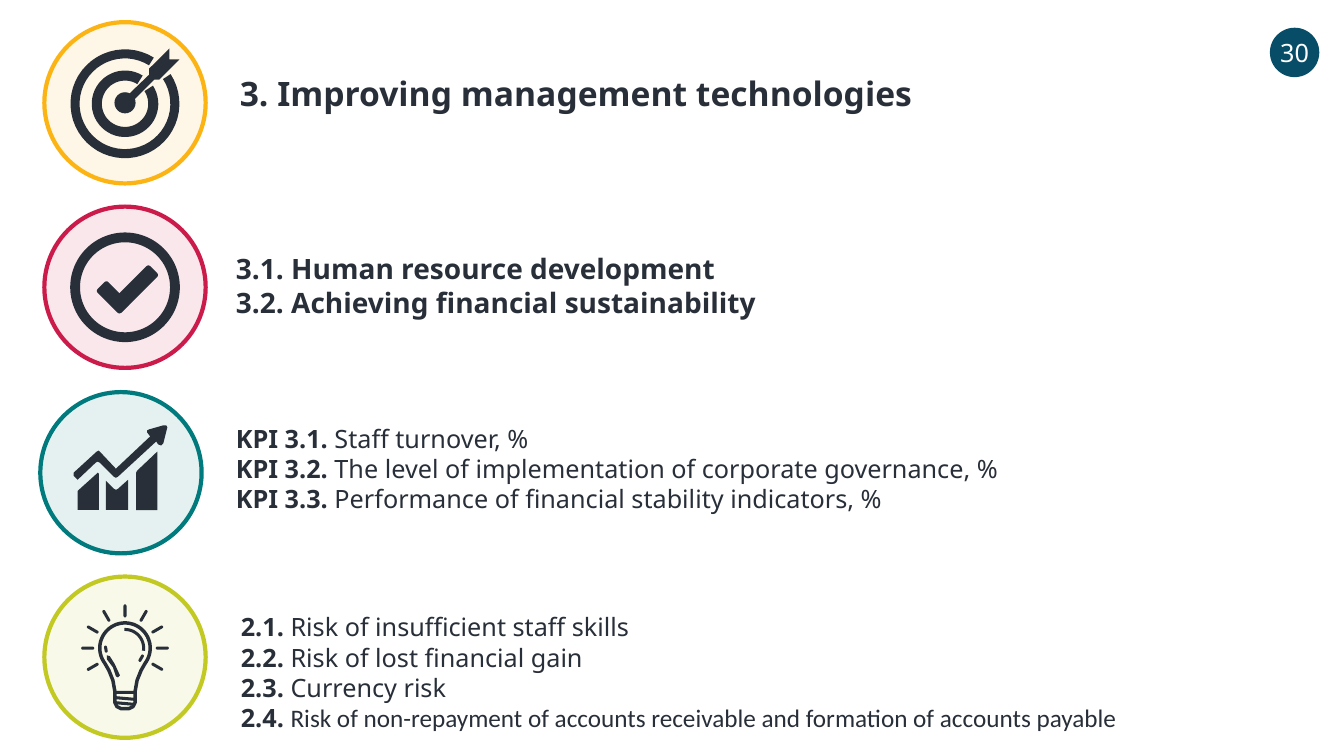
import math

from lxml import etree
from pptx import Presentation
from pptx.dml.color import RGBColor
from pptx.enum.shapes import MSO_SHAPE
from pptx.enum.text import MSO_ANCHOR, MSO_AUTO_SIZE, PP_ALIGN
from pptx.oxml.ns import qn
from pptx.util import Inches, Pt

OVAL = MSO_SHAPE.OVAL
ROUNDED = MSO_SHAPE.ROUNDED_RECTANGLE
MIDDLE = MSO_ANCHOR.MIDDLE
CENTER = PP_ALIGN.CENTER
FIT_SHAPE = MSO_AUTO_SIZE.SHAPE_TO_FIT_TEXT

COLORS = {
    "ink": "282F39",
    "page": "074D67",
    "white": "FFFFFF",
    "goal": "FCB414",
    "tasks": "CB1B4A",
    "kpi": "007A7D",
    "risks": "C2C923",
}
FONT = "Noto Sans"
MEDALLION_SIZE = 1.6


def rgb(name):
    return RGBColor.from_string(COLORS[name])


def paint(shape, fill=None, line=None, width=0):
    shape.shadow.inherit = False
    if fill:
        shape.fill.solid()
        shape.fill.fore_color.rgb = rgb(fill)
    else:
        shape.fill.background()
    if line:
        shape.line.color.rgb = rgb(line)
        shape.line.width = Pt(width)
    else:
        shape.line.fill.background()


def add_disc(shapes, cx, cy, diameter, fill=None, line=None, width=0):
    disc = shapes.add_shape(OVAL, Inches(cx - diameter / 2), Inches(cy - diameter / 2),
                            Inches(diameter), Inches(diameter))
    paint(disc, fill, line, width)
    return disc


def add_medallion(shapes, left, top, color):
    radius = MEDALLION_SIZE / 2
    medallion = add_disc(shapes, left + radius, top + radius, MEDALLION_SIZE, color, color, 3)
    tint = medallion.fill._xPr.find(qn("a:solidFill"))[0]
    etree.SubElement(tint, qn("a:alpha")).set("val", "10000")


def add_bar(shapes, cx, cy, length, thickness, angle, rounding=0.17):
    bar = shapes.add_shape(ROUNDED, Inches(cx - length / 2), Inches(cy - thickness / 2),
                           Inches(length), Inches(thickness))
    bar.rotation = angle
    bar.adjustments[0] = rounding
    paint(bar, "ink")


def add_outline(shapes, points, fill="ink", line=None, width=0):
    corners = [(Inches(x), Inches(y)) for x, y in points]
    builder = shapes.build_freeform(*corners[0])
    builder.add_line_segments(corners[1:], close=True)
    paint(builder.convert_to_shape(), fill, line, width)


def arc(cx, cy, radius, start, stop, steps=48):
    angles = [math.radians(start + (stop - start) * i / steps) for i in range(steps + 1)]
    return [(cx + radius * math.cos(a), cy - radius * math.sin(a)) for a in angles]


def add_ring(shapes, cx, cy, outer, inner, start, stop):
    add_outline(shapes, arc(cx, cy, outer, start, stop) + arc(cx, cy, inner, stop, start))


def add_target(shapes):
    cx, cy = 1.24, 1.03
    for outer, inner in ((0.54, 0.45), (0.33, 0.23)):
        add_ring(shapes, cx, cy, outer, inner, 58, 393)
    add_disc(shapes, cx, 1.02, 0.21, "ink")
    add_outline(shapes, [(1.68, 0.48), (1.68, 0.59), (1.78, 0.59), (1.58, 0.79), (1.53, 0.79),
                         (1.29, 1.03), (1.23, 0.98), (1.48, 0.74), (1.48, 0.68)])


def add_check(shapes):
    add_bar(shapes, 1.12, 2.95, 0.33, 0.15, 45)
    add_bar(shapes, 1.33, 2.87, 0.55, 0.15, 135)
    add_disc(shapes, 1.24, 2.85, 0.99, line="ink", width=7)


def add_growth(shapes):
    base = 5.06
    bars = (
        (0.77, 0.98, [(0.77, 4.87), (0.97, 4.69), (0.98, 4.7)]),
        (1.05, 1.27, [(1.05, 4.77), (1.13, 4.85), (1.15, 4.86), (1.17, 4.85), (1.27, 4.76)]),
        (1.35, 1.56, [(1.35, 4.69), (1.36, 4.67), (1.56, 4.48)]),
    )
    for left, right, skyline in bars:
        add_outline(shapes, skyline + [(right, base), (left, base)])
    add_outline(shapes, [(1.15, 4.65), (1.49, 4.33), (1.46, 4.29), (1.46, 4.27), (1.48, 4.26),
                         (1.62, 4.22), (1.65, 4.22), (1.66, 4.24), (1.62, 4.4), (1.6, 4.42),
                         (1.57, 4.41), (1.55, 4.38), (1.17, 4.73), (1.15, 4.74), (1.13, 4.73),
                         (0.99, 4.59), (0.97, 4.58), (0.95, 4.59), (0.77, 4.76), (0.73, 4.72),
                         (0.73, 4.69), (0.96, 4.48), (0.98, 4.47), (0.99, 4.48)])


def add_bulb(shapes):
    cx, cy = 1.24, 6.43
    neck = [(0.16, 6.65), (0.12, 6.75), (0.1, 6.86), (0.1, 6.97), (0.08, 7.01), (0.04, 7.03)]
    left_side = [(cx - dx, y) for dx, y in neck]
    right_side = [(cx + dx, y) for dx, y in reversed(neck)]
    add_outline(shapes, arc(cx, cy, 0.25, -37, 217) + left_side + right_side, None, "ink", 2.5)
    for y, tilt in ((6.87, 0), (6.93, 5), (6.98, 5)):
        add_bar(shapes, cx, y, 0.2, 0.03, tilt)
    add_ring(shapes, cx, cy, 0.2, 0.17, -8, 92)
    add_bar(shapes, 1.4, 6.53, 0.08, 0.03, 120, 0.5)
    add_bar(shapes, 1.05, 6.44, 0.07, 0.03, 80, 0.5)
    add_outline(shapes, [(1.06, 6.5), (1.09, 6.51), (1.14, 6.59), (1.19, 6.7), (1.17, 6.72),
                         (1.15, 6.71), (1.12, 6.62), (1.06, 6.54)])
    for angle in range(-30, 211, 30):
        turn = math.radians(angle)
        add_bar(shapes, cx + 0.37 * math.cos(turn), cy - 0.37 * math.sin(turn),
                0.13, 0.03, -angle, 0.5)


def add_lines(shapes, box, size, lines):
    frame = shapes.add_textbox(*map(Inches, box)).text_frame
    frame.word_wrap = True
    frame.auto_size = FIT_SHAPE
    for i, (label, detail, font) in enumerate(lines):
        paragraph = frame.paragraphs[0] if i == 0 else frame.add_paragraph()
        for text, face, bold in ((label, FONT, True), (detail, font, False)):
            if text:
                run = paragraph.add_run()
                run.text = text
                run.font.name = face
                run.font.size = Pt(size)
                run.font.bold = bold
                run.font.color.rgb = rgb("ink")


def add_page_number(shapes, number):
    badge = add_disc(shapes, 12.84, 0.52, 0.49, "page")
    frame = badge.text_frame
    frame.word_wrap = False
    frame.vertical_anchor = MIDDLE
    paragraph = frame.paragraphs[0]
    paragraph.text = number
    paragraph.alignment = CENTER
    paragraph.font.name = FONT
    paragraph.font.size = Pt(18)
    paragraph.font.color.rgb = rgb("white")


def main():
    deck = Presentation()
    deck.slide_width, deck.slide_height = Inches(13.33), Inches(7.5)
    shapes = deck.slides.add_slide(deck.slide_layouts[6]).shapes

    sections = (
        ("goal", 0.44, 0.22, add_target, (2.28, 0.67, 9.43, 0.5), 24,
         [("3. Improving management technologies", "", FONT)]),
        ("tasks", 0.44, 2.05, add_check, (2.24, 2.45, 9.41, 0.77), 20,
         [("3.1. Human resource development", "", FONT),
          ("3.2. Achieving financial sustainability", "", FONT)]),
        ("kpi", 0.4, 3.89, add_growth, (2.24, 4.15, 10.45, 1.01), 18,
         [("KPI 3.1. ", "Staff turnover, %", FONT),
          ("KPI 3.2. ", "The level of implementation of corporate governance, %", FONT),
          ("KPI 3.3. ", "Performance of financial stability indicators, %", FONT)]),
        ("risks", 0.44, 5.72, add_bulb, (2.29, 6.02, 10.65, 1.31), 18,
         [("2.1. ", "Risk of insufficient staff skills", FONT),
          ("2.2. ", "Risk of lost financial gain", FONT),
          ("2.3. ", "Currency risk", FONT),
          ("2.4. ", "Risk of non-repayment of accounts receivable and formation of accounts payable",
           "Calibri")]),
    )
    for color, left, top, add_icon, box, size, lines in sections:
        add_medallion(shapes, left, top, color)
        add_icon(shapes.add_group_shape().shapes)
        add_lines(shapes, box, size, lines)
    add_page_number(shapes, "30")
    deck.save("out.pptx")


if __name__ == "__main__":
    main()
